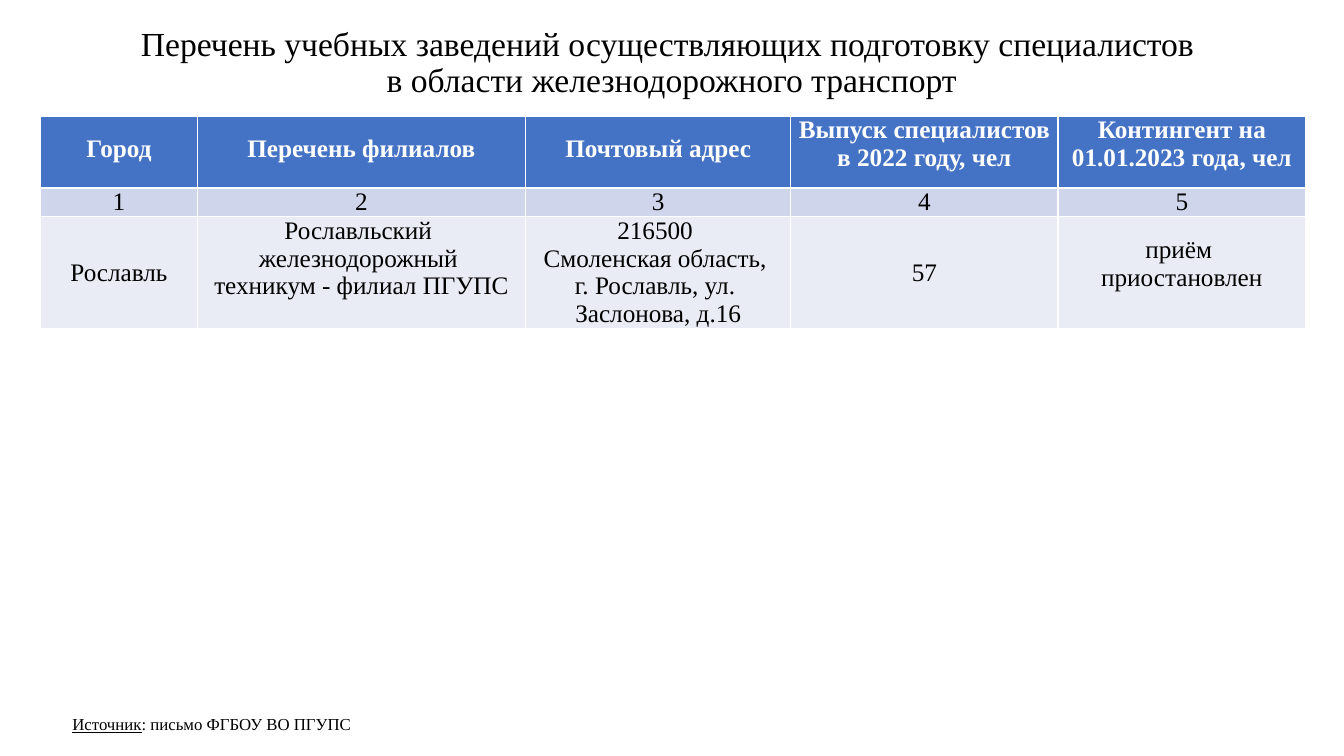
from pptx import Presentation
from pptx.dml.color import RGBColor
from pptx.enum.text import MSO_ANCHOR as Anchor, MSO_AUTO_SIZE as AutoSize, PP_ALIGN as Align
from pptx.util import Pt

# Content
TITLE = ["Перечень учебных заведений осуществляющих подготовку специалистов ",
         "в области железнодорожного транспорт"]
HEADER = [["Город"], ["Перечень филиалов"], ["Почтовый адрес"],
          ["Выпуск специалистов в 2022 году, чел"],
          ["Контингент на 01.01.2023 года, чел"]]
NUMBERS = [[str(number)] for number in range(1, len(HEADER) + 1)]
COLLEGE = [["Рославль"],
           ["Рославльский ", "железнодорожный ", "техникум - филиал ПГУПС"],
           ["216500 ", "Смоленская область, ", "г. Рославль, ул. ", "Заслонова, д.16"],
           ["57"],
           ["приём ", "приостановлен"]]
SOURCE = [("Источник", True), (": письмо ФГБОУ ВО ПГУПС", False)]

# Style
FONT = "Times New Roman"
BLACK = RGBColor(0x00, 0x00, 0x00)
WHITE = RGBColor(0xFF, 0xFF, 0xFF)
BLUE = RGBColor(0x44, 0x72, 0xC4)
LAVENDER = RGBColor(0xCF, 0xD5, 0xEA)
PALE = RGBColor(0xE9, 0xEB, 0xF5)

# Rows: cells, height, fill, text colour, bold
ROWS = [(HEADER, 51.5, BLUE, WHITE, True),
        (NUMBERS, 20.5, LAVENDER, BLACK, False),
        (COLLEGE, 79.5, PALE, BLACK, False)]
COLUMN_WIDTHS = [111.6, 234.7, 189.4, 190.8, 177.1]
# Cells by (row, column) that start lower or sit in the middle
TOP_INSETS = {(0, 0): 14, (0, 1): 14, (0, 2): 14, (2, 4): 14}
CENTRED = {(2, 0), (2, 3)}


def add_run(paragraph, text, size, color, bold=False, underline=False):
    run = paragraph.add_run()
    run.text = text
    font = run.font
    font.name, font.size, font.bold, font.underline = FONT, Pt(size), bold, underline
    font.color.rgb = color


def add_lines(paragraph, lines, size, color, bold=False):
    paragraph.alignment = Align.CENTER
    for index, line in enumerate(lines):
        if index:
            paragraph.add_line_break()
        add_run(paragraph, line, size, color, bold)


deck = Presentation()
deck.slide_width, deck.slide_height = Pt(960), Pt(540)
slide = deck.slides.add_slide(deck.slide_layouts[5])

# Title
title = slide.shapes.title
title.left, title.top, title.width, title.height = Pt(57.6), Pt(26), Pt(844.5), Pt(39)
title.text_frame.auto_size = AutoSize.NONE
title.text_frame.word_wrap = True
title.text_frame.vertical_anchor = Anchor.MIDDLE
heading = title.text_frame.paragraphs[0]
heading.line_spacing = 0.9
add_lines(heading, TITLE, 24, BLACK)

# Table of colleges
colleges = slide.shapes.add_table(
    len(ROWS), len(HEADER), Pt(29.2), Pt(82.8),
    Pt(sum(COLUMN_WIDTHS)), Pt(sum(row[1] for row in ROWS))).table
for column, width in zip(colleges.columns, COLUMN_WIDTHS):
    column.width = Pt(width)
for r, (cells, height, fill, color, bold) in enumerate(ROWS):
    colleges.rows[r].height = Pt(height)
    for c, lines in enumerate(cells):
        cell = colleges.cell(r, c)
        cell.fill.solid()
        cell.fill.fore_color.rgb = fill
        cell.margin_left = cell.margin_right = Pt(5)
        cell.margin_top, cell.margin_bottom = Pt(TOP_INSETS.get((r, c), 0)), Pt(0)
        cell.vertical_anchor = Anchor.MIDDLE if (r, c) in CENTRED else Anchor.TOP
        add_lines(cell.text_frame.paragraphs[0], lines, 18, color, bold)

# Source line
source = slide.shapes.add_textbox(Pt(44.6), Pt(506.2), Pt(635), Pt(21.8)).text_frame
source.word_wrap = True
for text, underline in SOURCE:
    add_run(source.paragraphs[0], text, 12, BLACK, underline=underline)

deck.save("out.pptx")
